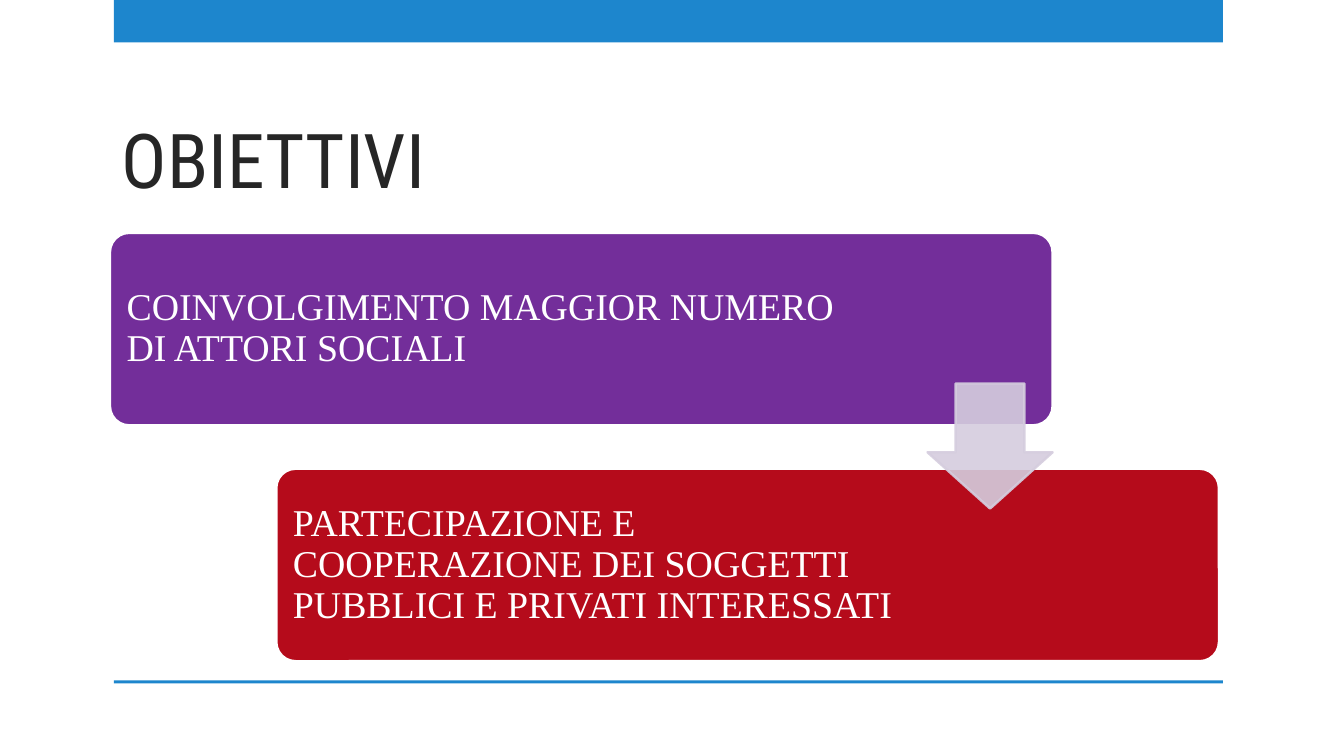
from dataclasses import dataclass

from lxml import etree
from pptx import Presentation
from pptx.dml.color import RGBColor
from pptx.enum import shapes, text
from pptx.oxml import ns
from pptx.util import Inches, Pt


@dataclass(frozen=True)
class Theme:
    accent: str = "1D86CD"
    heading: str = "262626"
    white: str = "FFFFFF"
    purple: str = "732E9A"
    red: str = "B50B1B"
    arrow: str = "D5CDDE"
    title_font: str = "Roboto Condensed"
    body_font: str = "Times New Roman"
    title_size: int = 54
    body_size: int = 27
    outline: float = 1.75


THEME = Theme()


def add_block(slide, kind, box, fill, line=None):
    shape = slide.shapes.add_shape(kind, *map(Inches, box))
    shape.shadow.inherit = False
    shape.fill.solid()
    shape.fill.fore_color.rgb = RGBColor.from_string(fill)
    if line:
        shape.line.color.rgb = RGBColor.from_string(line)
        shape.line.width = Pt(THEME.outline)
    else:
        shape.line.fill.background()
    return shape


def format_text(paragraph, font_name, size, color):
    paragraph.alignment = text.PP_ALIGN.LEFT
    for run in paragraph.runs:
        run.font.name = font_name
        run.font.size = Pt(size)
        run.font.color.rgb = RGBColor.from_string(color)


def add_frame_bars(slide, left, width):
    for top, height in ((0, 0.42), (6.75, 0.03)):
        add_block(slide, shapes.MSO_SHAPE.RECTANGLE,
                  (left, top, width, height), THEME.accent)


def fill_title(slide, box, wording):
    title = slide.shapes.title
    title.left, title.top, title.width, title.height = map(Inches, box)
    frame = title.text_frame
    frame.text = wording
    frame.auto_size = text.MSO_AUTO_SIZE.NONE
    frame.vertical_anchor = text.MSO_ANCHOR.BOTTOM
    format_text(frame.paragraphs[0], THEME.title_font, THEME.title_size, THEME.heading)


def add_step(slide, box, fill, wording, right_margin):
    shape = add_block(slide, shapes.MSO_SHAPE.ROUNDED_RECTANGLE, box, fill, THEME.white)
    shape.adjustments[0] = 0.1
    frame = shape.text_frame
    frame.text = wording
    frame.word_wrap = True
    frame.vertical_anchor = text.MSO_ANCHOR.MIDDLE
    frame.margin_left = frame.margin_top = frame.margin_bottom = Inches(0.11)
    frame.margin_right = Inches(right_margin)
    paragraph = frame.paragraphs[0]
    paragraph.line_spacing = 0.9
    format_text(paragraph, THEME.body_font, THEME.body_size, THEME.white)


def add_step_arrow(slide, box):
    """Add a down arrow whose fill and outline are 90% opaque."""
    arrow = add_block(slide, shapes.MSO_SHAPE.DOWN_ARROW, box, THEME.arrow, THEME.arrow)
    arrow.adjustments[0] = 0.55
    arrow.adjustments[1] = 0.45
    for color in arrow.element.spPr.iter(ns.qn("a:srgbClr")):
        etree.SubElement(color, ns.qn("a:alpha"), val="90000")


def add_staircase(slide, box):
    """Place the steps from the top left to the bottom right of the box."""
    left, top, width, height = box
    step_width, step_height, arrow_size = 9.35, 1.91, 1.24
    steps = (
        (THEME.purple, "COINVOLGIMENTO MAGGIOR NUMERO DI ATTORI SOCIALI", 1.97),
        (THEME.red, "PARTECIPAZIONE E COOPERAZIONE DEI SOGGETTI "
                    "PUBBLICI E PRIVATI INTERESSATI", 3),
    )
    for index, (fill, wording, right_margin) in enumerate(steps):
        step_box = (left + index * (width - step_width),
                    top + index * (height - step_height), step_width, step_height)
        add_step(slide, step_box, fill, wording, right_margin)
    add_step_arrow(slide, (left + step_width - arrow_size,
                           top + (height - arrow_size) / 2 - 0.01,
                           arrow_size, arrow_size))


def main():
    presentation = Presentation()
    presentation.slide_width = Inches(13.33)
    presentation.slide_height = Inches(7.5)
    title_only = presentation.slide_layouts.get_by_name("Title Only")
    slide = presentation.slides.add_slide(title_only)
    add_frame_bars(slide, 1.13, 11)
    fill_title(slide, (1.11, 1.03, 8.25, 1.04), "OBIETTIVI")
    add_staircase(slide, (1.09, 2.31, 11, 4.25))
    presentation.save("out.pptx")


if __name__ == "__main__":
    main()
